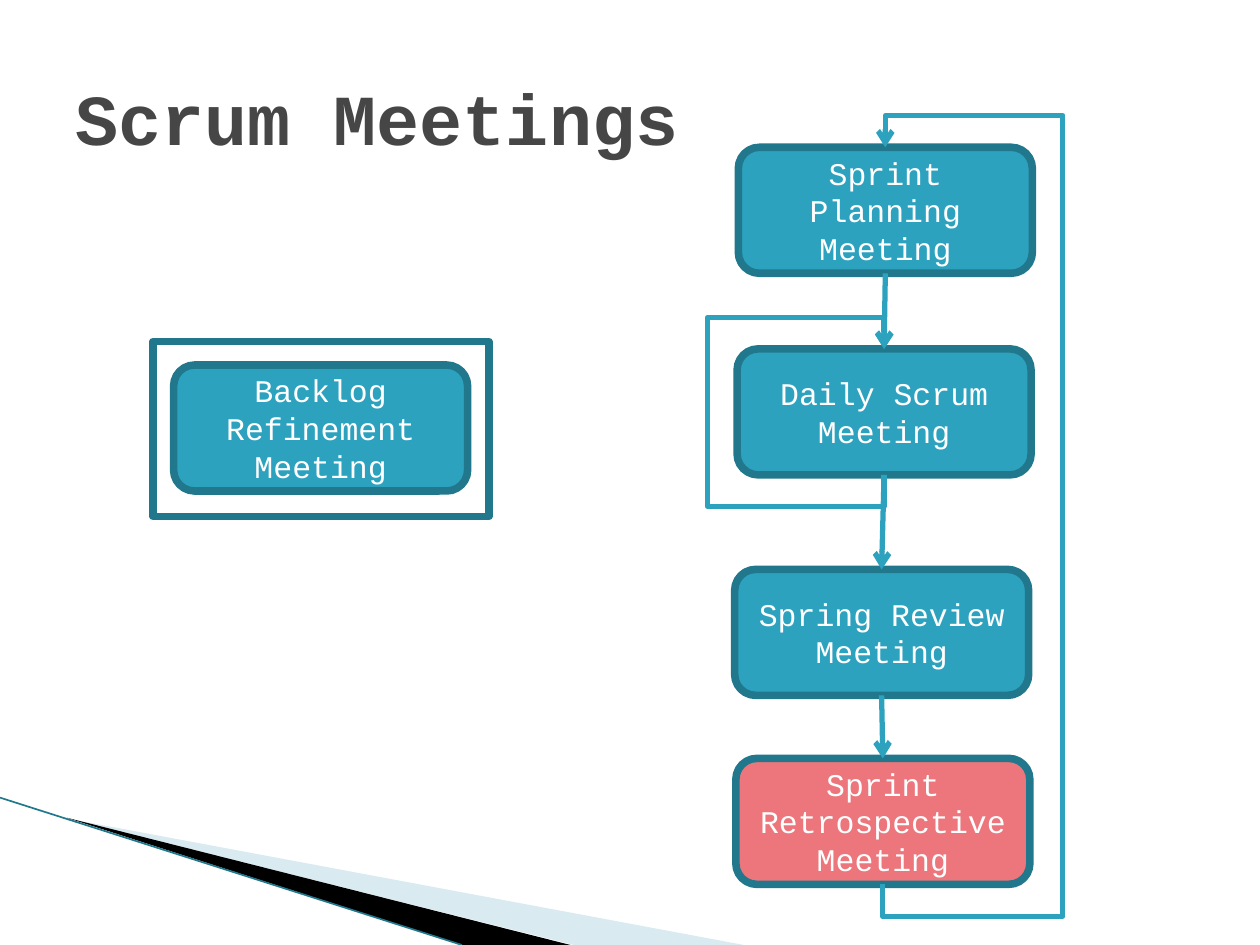
from lxml import etree
from pptx import Presentation
from pptx.dml.color import RGBColor
from pptx.enum import shapes, text
from pptx.oxml import ns
from pptx.util import Pt

FONT = "Courier New"
TEAL, DARK_TEAL, CORAL = "2DA2BF", "21788D", "EC767C"
BOX_WIDTH, BOX_HEIGHT = 168, 72
TOP_SITE, BOTTOM_SITE = 0, 2

SPRINT_MEETINGS = [
    ("Sprint Planning Meeting", 421.9, 84.2, TEAL),
    ("Daily Scrum Meeting", 421.2, 199.4, TEAL),
    ("Spring Review Meeting", 419.8, 325.4, TEAL),
    ("Sprint Retrospective Meeting", 420.5, 433.4, CORAL),
]


def color(hex_string):
    return RGBColor.from_string(hex_string)


def set_fill(shape, hex_string, opacity=100):
    shape.fill.solid()
    shape.fill.fore_color.rgb = color(hex_string)
    if opacity < 100:
        srgb = shape.fill._xPr.find(".//" + ns.qn("a:srgbClr"))
        etree.SubElement(srgb, ns.qn("a:alpha"), val=str(opacity * 1000))


def set_line(shape, hex_string, width):
    shape.line.color.rgb = color(hex_string)
    shape.line.width = Pt(width)


def add_arrowhead(shape):
    line = shape.line._get_or_add_ln()
    etree.SubElement(line, ns.qn("a:tailEnd"), type="arrow")


def add_run(paragraph, wording, size, hex_string, bold=False):
    run = paragraph.add_run()
    run.text = wording
    run.font.name = FONT
    run.font.size = Pt(size)
    run.font.bold = bold
    run.font.color.rgb = color(hex_string)


def add_outline(container, points, closed):
    """Draw a polygon, or an open polyline, through points given in points."""
    corners = [(Pt(x), Pt(y)) for x, y in points]
    builder = container.build_freeform(*corners[0])
    builder.add_line_segments(corners[1:], close=closed)
    shape = builder.convert_to_shape()
    shape.shadow.inherit = False
    return shape


def add_polygon(container, points, hex_string, opacity=100):
    shape = add_outline(container, points, closed=True)
    set_fill(shape, hex_string, opacity)
    shape.line.fill.background()


def add_loop_arrow(container, points):
    shape = add_outline(container, points, closed=False)
    shape.fill.background()
    set_line(shape, TEAL, 3)
    add_arrowhead(shape)


def add_straight_line(container, start, end, hex_string, width):
    connector = container.add_connector(
        shapes.MSO_CONNECTOR.STRAIGHT, *(Pt(value) for value in start + end))
    set_line(connector, hex_string, width)
    etree.SubElement(connector._element.spPr, ns.qn("a:effectLst"))
    return connector


def add_step_arrow(container, upper, lower):
    connector = add_straight_line(container, (0, 0), (0, 0), TEAL, 3)
    connector.begin_connect(upper, BOTTOM_SITE)
    connector.end_connect(lower, TOP_SITE)
    add_arrowhead(connector)


def add_meeting(container, wording, left, top, fill):
    box = container.add_shape(
        shapes.MSO_SHAPE.ROUNDED_RECTANGLE,
        Pt(left), Pt(top), Pt(BOX_WIDTH), Pt(BOX_HEIGHT))
    box.shadow.inherit = False
    set_fill(box, fill)
    set_line(box, DARK_TEAL, 4.33)
    frame = box.text_frame
    frame.word_wrap = True
    frame.vertical_anchor = text.MSO_ANCHOR.MIDDLE
    paragraph = frame.paragraphs[0]
    paragraph.alignment = text.PP_ALIGN.CENTER
    add_run(paragraph, wording, 18, "FFFFFF")
    return box


def add_frame(container, left, top, width, height):
    frame = container.add_shape(
        shapes.MSO_SHAPE.RECTANGLE, Pt(left), Pt(top), Pt(width), Pt(height))
    frame.shadow.inherit = False
    frame.fill.background()
    set_line(frame, DARK_TEAL, 4.33)


def add_corner_decoration(container):
    add_polygon(container, [(39.6, 468), (425, 540), (328, 540)], "A0CBDC", 40)
    add_polygon(container, [(38.2, 467.3), (326, 540), (264, 540)], "000000")
    add_straight_line(container, (0, 455.8), (264, 540), DARK_TEAL, 0.95)


def format_title(title, wording):
    title.left, title.top, title.width, title.height = map(Pt, (36, 21.6, 648, 90))
    frame = title.text_frame
    frame.word_wrap = True
    frame.auto_size = text.MSO_AUTO_SIZE.NONE
    frame.vertical_anchor = text.MSO_ANCHOR.MIDDLE
    paragraph = frame.paragraphs[0]
    paragraph.alignment = text.PP_ALIGN.LEFT
    add_run(paragraph, wording, 41, "464646", bold=True)


def add_sprint_cycle(container):
    boxes = [add_meeting(container, *meeting) for meeting in SPRINT_MEETINGS]
    for upper, lower in zip(boxes, boxes[1:]):
        add_step_arrow(container, upper, lower)

    def loop(first, last, side, gap):
        """Lead from below the last meeting round the side to the first."""
        _, first_left, first_top, _ = SPRINT_MEETINGS[first]
        _, last_left, last_top, _ = SPRINT_MEETINGS[last]
        start, end = last_left + BOX_WIDTH / 2, first_left + BOX_WIDTH / 2
        bottom = last_top + BOX_HEIGHT
        add_loop_arrow(container, [
            (start, bottom), (start, bottom + gap), (side, bottom + gap),
            (side, first_top - gap), (end, first_top - gap), (end, first_top)])

    loop(1, 1, side=404.2, gap=18)
    loop(0, 3, side=607.4, gap=18.2)


def main():
    presentation = Presentation()
    presentation.slide_width, presentation.slide_height = Pt(720), Pt(540)
    slide = presentation.slides.add_slide(presentation.slide_layouts[5])
    add_corner_decoration(slide.shapes)
    format_title(slide.shapes.title, "Scrum Meetings")

    backlog = slide.shapes.add_group_shape().shapes
    add_frame(backlog, 87.4, 195.2, 192, 100)
    add_meeting(backlog, "Backlog Refinement Meeting", 99.2, 208.6, TEAL)

    add_sprint_cycle(slide.shapes.add_group_shape().shapes)
    presentation.save("out.pptx")


if __name__ == "__main__":
    main()
